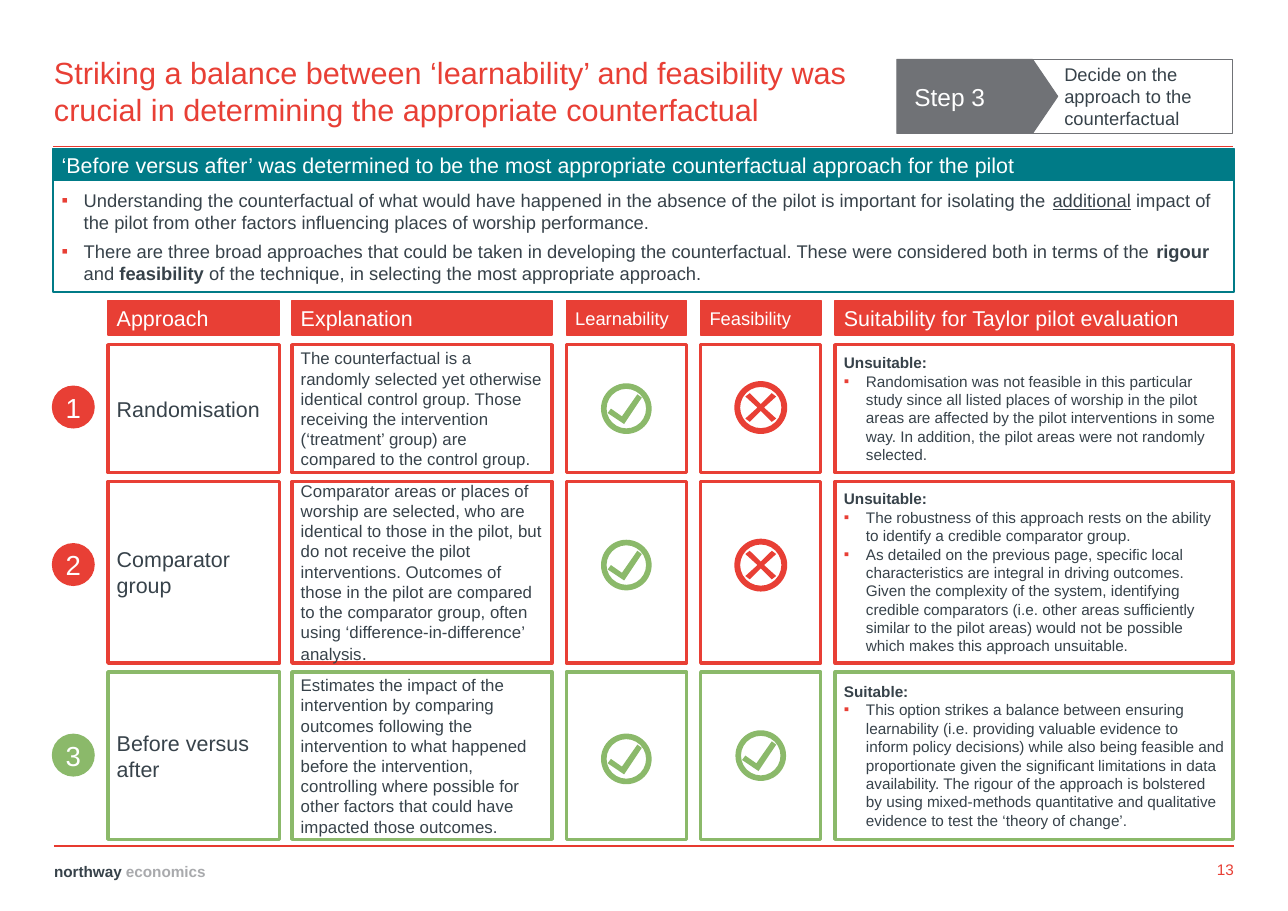
from lxml import etree
from pptx import Presentation
from pptx.dml.color import RGBColor
from pptx.enum import shapes as sh, text as tx
from pptx.oxml import ns
from pptx.util import Emu, Inches, Pt

COLORS = {"red": "E83F35", "rule": "E73A2F", "teal": "007B87", "green": "8BB96A",
          "grey": "707276", "ink": "37424A", "pale": "A9AAAD", "white": "FFFFFF"}
LEFT, MID, RIGHT = tx.PP_ALIGN.LEFT, tx.PP_ALIGN.CENTER, tx.PP_ALIGN.RIGHT
TOP, CENTRE, BOTTOM = (tx.MSO_ANCHOR.TOP, tx.MSO_ANCHOR.MIDDLE, tx.MSO_ANCHOR.BOTTOM)
RECT = sh.MSO_SHAPE.RECTANGLE

# Approach, Explanation, Learnability, Feasibility, Suitability: left and width
COLUMNS = [(0.98, 1.56), (2.65, 2.36), (5.14, 1.09), (6.36, 1.09), (7.58, 3.61)]
HEADERS = [("Approach", 14), ("Explanation", 14), ("Learnability", 12),
           ("Feasibility", 12), ("Suitability for Taylor pilot evaluation", 14)]

# Each row: top, height, colour, badge centre, marks (shape, centre), texts
ROWS = [
    (3.13, 1.16, "red", 3.7, [("tick", 3.71), ("cross", 3.7)], "Randomisation",
     "The counterfactual is a randomly selected yet otherwise identical control group. Those "
     "receiving the intervention (‘treatment’ group) are compared to the control group.",
     "Unsuitable:",
     ["Randomisation was not feasible in this particular study since all listed places of "
      "worship in the pilot areas are affected by the pilot interventions in some way. In "
      "addition, the pilot areas were not randomly selected."]),
    (4.37, 1.65, "red", 5.13, [("tick", 5.13), ("cross", 5.13)], "Comparator group",
     [("Comparator areas or places of worship are selected, who are identical to those in the "
       "pilot, but do not receive the pilot interventions. Outcomes of those in the pilot are "
       "compared to the comparator group, often using ‘difference-in-difference’ analysis", ""),
      (".", "large")],
     "Unsuitable:",
     ["The robustness of this approach rests on the ability to identify a credible comparator "
      "group.",
      "As detailed on the previous page, specific local characteristics are integral in driving "
      "outcomes. Given the complexity of the system, identifying credible comparators (i.e. "
      "other areas sufficiently similar to the pilot areas) would not be possible which makes "
      "this approach unsuitable."]),
    (6.1, 1.52, "green", 6.86, [("tick", 6.89), ("tick", 6.86)], "Before versus after",
     "Estimates the impact of the intervention by comparing outcomes following the "
     "intervention to what happened before the intervention, controlling where possible for "
     "other factors that could have impacted those outcomes.",
     "Suitable:",
     ["This option strikes a balance between ensuring learnability (i.e. providing valuable "
      "evidence to inform policy decisions) while also being feasible and proportionate given "
      "the significant limitations in data availability. The rigour of the approach is "
      "bolstered by using mixed-methods quantitative and qualitative evidence to test the "
      "‘theory of change’."]),
]

# Mark outlines, as offsets from the centre of the ring
HALF_CROSS = [(0.03, 0), (0.14, -0.1), (0.1, -0.13), (0, -0.03), (-0.1, -0.13), (-0.14, -0.1)]
MARKS = {
    "tick": ("green", 0.46, [(0.14, -0.1), (0.1, -0.13), (-0.04, 0.07), (-0.14, 0),
                             (-0.17, 0.04), (-0.02, 0.14)]),
    "cross": ("red", 0.48, HALF_CROSS + [(-x, -y) for x, y in HALF_CROSS]),
}


def rgb(name):
    return RGBColor.from_string(COLORS[name])


def add_bullet(p):
    pPr = p._p.get_or_add_pPr()
    pPr.set("marL", str(Inches(0.2)))
    pPr.set("indent", str(-Inches(0.2)))
    clr = etree.SubElement(pPr, ns.qn("a:buClr"))
    etree.SubElement(clr, ns.qn("a:srgbClr"), val=COLORS["red"])
    etree.SubElement(pPr, ns.qn("a:buFont"), typeface="Arial")
    etree.SubElement(pPr, ns.qn("a:buChar"), char="▪")


def write(sp, paras, size, color="ink", anchor=CENTRE, align=LEFT, gap=0,
          insets=(0.08,) * 4, wrap=True, bullets_from=None):
    """Fill a shape; a paragraph is a string or a list of (text, style) runs."""
    tf = sp.text_frame
    tf.word_wrap, tf.vertical_anchor = wrap, anchor
    tf.margin_left, tf.margin_top, tf.margin_right, tf.margin_bottom = map(Inches, insets)
    for i, para in enumerate(paras):
        p = tf.paragraphs[0] if i == 0 else tf.add_paragraph()
        p.alignment, p.space_before, p.space_after = align, Pt(gap), Pt(gap)
        if bullets_from is not None and i >= bullets_from:
            add_bullet(p)
        for content, style in [(para, "")] if isinstance(para, str) else para:
            r = p.add_run()
            r.text = content
            r.font.name, r.font.size = "Arial", Pt(size + (style == "large"))
            r.font.bold = style in ("bold", "bold pale")
            r.font.underline = style == "underline"
            r.font.color.rgb = rgb("pale" if style == "bold pale" else color)


def add_box(s, box, fill=None, line=None, width=1, kind=RECT):
    sp = s.shapes.add_shape(kind, *map(Inches, box))
    paint(sp, fill, line, width)
    return sp


def paint(sp, fill, line=None, width=1):
    sp.shadow.inherit = False
    if fill:
        sp.fill.solid()
        sp.fill.fore_color.rgb = rgb(fill)
    else:
        sp.fill.background()
    if line:
        sp.line.color.rgb, sp.line.width = rgb(line), Pt(width)
    else:
        sp.line.fill.background()


def add_label(s, box, paras, size, **options):
    sp = s.shapes.add_textbox(*map(Inches, box))
    write(sp, paras, size, insets=(0,) * 4, **options)


def add_rule(s, x, y, w):
    line = s.shapes.add_connector(sh.MSO_CONNECTOR.STRAIGHT, *map(Inches, (x, y, x + w, y)))
    line.line.color.rgb, line.line.width = rgb("rule"), Pt(1)
    etree.SubElement(line._element.spPr, ns.qn("a:effectLst"))


def add_frame(s, x, y, w):
    """Rules and footer."""
    add_rule(s, x, y, w)
    add_rule(s, x + 0.01, y + 6.35, w)
    add_label(s, (x + w - 0.29, y + 6.45, 0.3, 0.2), ["13"], 10, color="red",
              anchor=BOTTOM, align=RIGHT, gap=2, wrap=False)
    add_label(s, (x + 0.01, y + 6.46, 1.38, 0.2),
              [[("northway ", "bold"), ("economics", "bold pale")]], 10,
              anchor=BOTTOM, gap=2, wrap=False)


def add_step(s, x, y, w, h):
    """Step arrow in front of its description."""
    sp = add_box(s, (x + 1.22, y, w - 1.22, h), "white", "grey", 0.75)
    write(sp, ["Decide on the approach to the counterfactual"], 12, gap=2,
          insets=(0.3, 0.06, 0.06, 0.06))
    sp = add_box(s, (x, y, 1.46, h), "grey", "grey", 0.75, sh.MSO_SHAPE.PENTAGON)
    sp.adjustments[0] = 0.34
    write(sp, ["Step 3"], 16, "white", insets=(0.16, 0.04, 0.04, 0.04))


def add_summary(s, x, y, w, h):
    """Teal banner over a bulleted panel."""
    banner = 0.29
    sp = add_box(s, (x, y, w, banner), "teal", "teal")
    write(sp, ["‘Before versus after’ was determined to be the most appropriate "
               "counterfactual approach for the pilot"], 14, "white", gap=2)
    sp = add_box(s, (x, y + banner, w, h - banner), line="teal")
    write(sp, [
        [("Understanding the counterfactual of what would have happened in the absence of the "
          "pilot is important for isolating the ", ""), ("additional", "underline"),
         (" impact of the pilot from other factors influencing places of worship "
          "performance.", "")],
        [("There are three broad approaches that could be taken in developing the "
          "counterfactual. These were considered both in terms of the ", ""),
         ("rigour ", "bold"), ("and", ""), (" feasibility", "bold"),
         (" of the technique, in selecting the most appropriate approach.", "")],
    ], 12, anchor=TOP, gap=2, bullets_from=0)


def add_mark(s, kind, cx, cy):
    """Ringed tick or cross."""
    color, d, outline = MARKS[kind]
    ring = add_box(s, (cx - d / 2, cy - d / 2, d, d), color, kind=sh.MSO_SHAPE.DONUT)
    ring.adjustments[0] = 0.11
    points = [(Inches(cx + dx), Inches(cy + dy)) for dx, dy in outline]
    builder = s.shapes.build_freeform(*points[0])
    builder.add_line_segments(points[1:], close=True)
    paint(builder.convert_to_shape(Emu(0), Emu(0)), color)


def add_headers(s, y, h):
    for (x, w), (label, size) in zip(COLUMNS, HEADERS):
        write(add_box(s, (x, y, w, h), "red", "red"), [label], size, "white")


def add_row(s, number, row):
    """Numbered badge and five outlined cells."""
    y, h, color, cy, marks, approach, explanation, verdict, reasons = row
    badge = add_box(s, (0.47, cy - 0.2, 0.39, 0.39), color, kind=sh.MSO_SHAPE.OVAL)
    write(badge, [str(number)], 18, "white", align=MID, gap=2, insets=(0,) * 4)
    cells = [add_box(s, (x, y, w, h), line=color, width=2.25) for x, w in COLUMNS]
    write(cells[0], [approach], 14)
    write(cells[1], [explanation], 11)
    write(cells[4], [[(verdict, "bold")], *reasons], 10, bullets_from=1)
    for (x, w), (kind, mark_y) in zip(COLUMNS[2:4], marks):
        add_mark(s, kind, x + w / 2, mark_y)


def main():
    prs = Presentation()
    prs.slide_width, prs.slide_height = Inches(11.69), Inches(8.27)
    s = prs.slides.add_slide(prs.slide_layouts[6])
    add_frame(s, 0.48, 1.33, 10.71)
    add_label(s, (0.49, 0.49, 7.56, 0.85),
              ["Striking a balance between ‘learnability’ and feasibility was crucial in "
               "determining the appropriate counterfactual"], 20, color="red", anchor=TOP)
    add_step(s, 8.14, 0.54, 3.05, 0.67)
    add_summary(s, 0.48, 1.35, 10.72, 1.3)
    add_headers(s, 2.73, 0.31)
    for number, row in enumerate(ROWS, 1):
        add_row(s, number, row)
    prs.save("out.pptx")


if __name__ == "__main__":
    main()
